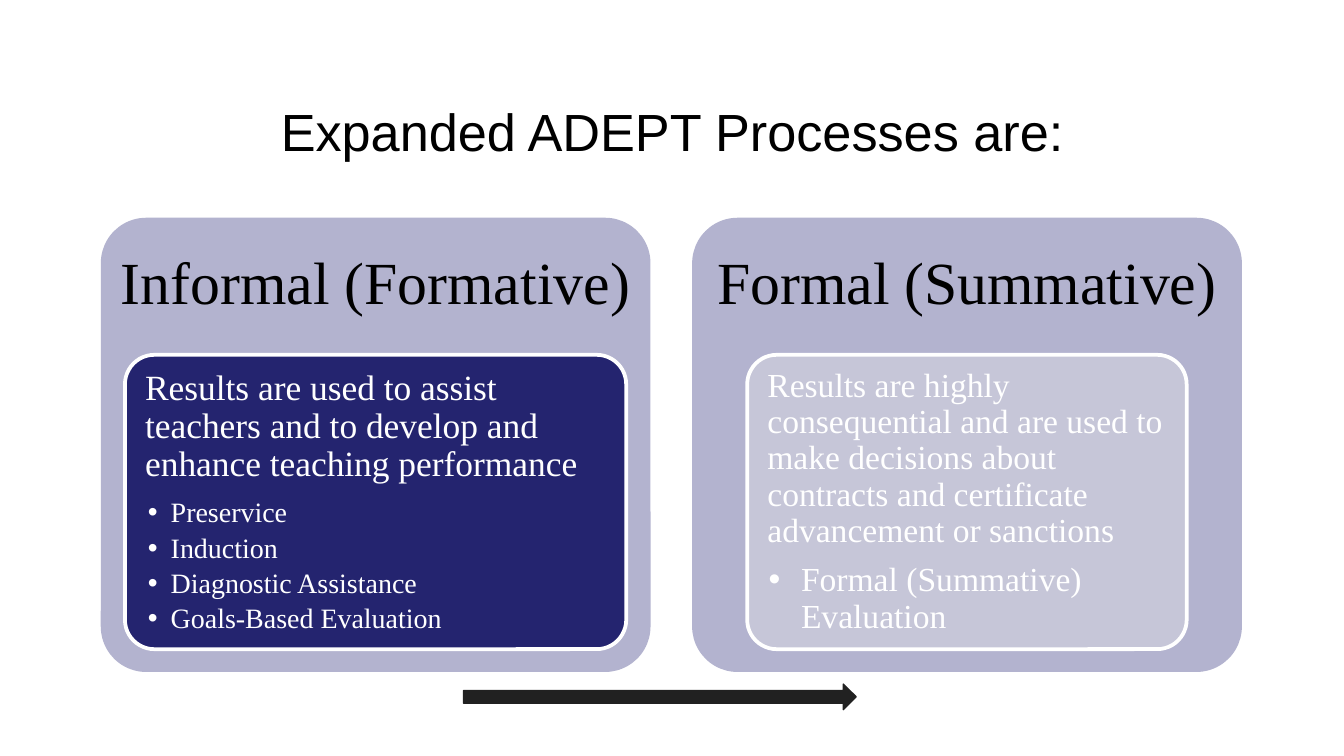
"""Build the slide that compares informal and formal ADEPT processes."""
from lxml.etree import SubElement
from pptx import Presentation
from pptx.dml.color import RGBColor
from pptx.enum.shapes import MSO_SHAPE
from pptx.enum.text import MSO_ANCHOR, PP_ALIGN
from pptx.oxml.ns import qn
from pptx.util import Inches, Pt

COLORS = {"black": "000000", "white": "FFFFFF", "panel": "B3B3CF",
          "navy": "24246F", "pale": "C6C6D8", "arrow": "212121"}
SLIDE_WIDTH = 10
SLIDE_HEIGHT = SLIDE_WIDTH * 9 / 16
LEFT, TOP, PITCH = 0.75, 1.62, 4.4
PANEL_WIDTH, PANEL_HEIGHT, HEADING_HEIGHT = 4.09, 3.38, 1.01
CARD_TOP, CARD_HEIGHT = 2.64, 2.19
PAD_X, PAD_Y = 0.09, 0.06

PANELS = [
    {"heading": "Informal (Formative)", "fill": "navy", "width": 3.73,
     "summary": "Results are used to assist teachers and to develop and enhance teaching performance",
     "bullets": ["Preservice", "Induction", "Diagnostic Assistance", "Goals-Based Evaluation"],
     "sizes": (19, 15), "margin": 0.05, "indent": (0.19, -0.17), "gaps": (7.7, 2.7)},
    {"heading": "Formal (Summative)", "fill": "pale", "width": 3.27,
     "summary": "Results are highly consequential and are used to make decisions about "
                "contracts and certificate advancement or sanctions",
     "bullets": ["Formal (Summative) Evaluation"],
     "sizes": (18, 18), "margin": 0.04, "indent": (0.25, -0.24), "gaps": (7, 7)},
]

deck = Presentation()
deck.slide_width, deck.slide_height = Inches(SLIDE_WIDTH), Inches(SLIDE_HEIGHT)
page = deck.slides.add_slide(deck.slide_layouts[6])


def add_block(kind, area, fill, line=None, line_width=0, adjustments=(0.1,)):
    shape = page.shapes.add_shape(kind, *map(Inches, area))
    shape.shadow.inherit = False
    for index, value in enumerate(adjustments):
        shape.adjustments[index] = value
    shape.fill.solid()
    shape.fill.fore_color.rgb = RGBColor.from_string(COLORS[fill])
    if line:
        shape.line.color.rgb = RGBColor.from_string(COLORS[line])
        shape.line.width = Pt(line_width)
    else:
        shape.line.fill.background()


def add_text(area, margins, anchor, entries, font, color):
    box = page.shapes.add_textbox(*map(Inches, area))
    frame = box.text_frame
    settings = {"word_wrap": True, "vertical_anchor": anchor,
                "margin_left": Inches(margins[0]), "margin_right": Inches(margins[0]),
                "margin_top": Inches(margins[1]), "margin_bottom": Inches(margins[1])}
    for name, value in settings.items():
        setattr(frame, name, value)
    for index, (text, size, layout) in enumerate(entries):
        para = frame.add_paragraph() if index else frame.paragraphs[0]
        for name, value in layout.items():
            setattr(para, name, value)
        span = para.add_run()
        span.text = text
        for name, value in {"name": font, "size": Pt(size)}.items():
            setattr(span.font, name, value)
        span.font.color.rgb = RGBColor.from_string(COLORS[color])
    return frame


add_text((LEFT, 0.5, SLIDE_WIDTH - 2 * LEFT, 0.94), (0.1, 0.05), MSO_ANCHOR.MIDDLE,
         [("Expanded ADEPT Processes are:", 28, {"alignment": PP_ALIGN.CENTER})],
         "Arial", "black")

for column, panel in enumerate(PANELS):
    left = LEFT + column * PITCH
    add_block(MSO_SHAPE.ROUNDED_RECTANGLE, (left, TOP, PANEL_WIDTH, PANEL_HEIGHT), "panel")
    add_text((left, TOP, PANEL_WIDTH, HEADING_HEIGHT), (0.13, 0.13), MSO_ANCHOR.MIDDLE,
             [(panel["heading"], 32, {"alignment": PP_ALIGN.CENTER, "line_spacing": 0.9})],
             "Times New Roman", "black")

    width = panel["width"]
    card_left = left + (PANEL_WIDTH - width) / 2
    add_block(MSO_SHAPE.ROUNDED_RECTANGLE, (card_left, CARD_TOP, width, CARD_HEIGHT),
              panel["fill"], "white", 2)

    summary_size, bullet_size = panel["sizes"]
    first_gap, next_gap = panel["gaps"]
    entries = [(panel["summary"], summary_size, {"line_spacing": 0.9})]
    for row, bullet in enumerate(panel["bullets"]):
        gap = next_gap if row else first_gap
        entries.append((bullet, bullet_size,
                        {"level": 1, "line_spacing": 0.9, "space_before": Pt(gap)}))
    frame = add_text((card_left + PAD_X, CARD_TOP + PAD_Y, width - 2 * PAD_X,
                      CARD_HEIGHT - 2 * PAD_Y), (0.06, panel["margin"]),
                     MSO_ANCHOR.TOP, entries, "Times New Roman", "white")

    for para in frame.paragraphs[1:]:
        properties = para._p.get_or_add_pPr()
        for name, value in zip(("marL", "indent"), panel["indent"]):
            properties.set(name, str(Inches(value)))
        bullet_color = SubElement(properties, qn("a:buClr"))
        SubElement(bullet_color, qn("a:srgbClr"), val=COLORS["white"])
        SubElement(properties, qn("a:buFont"), typeface="Arial")
        SubElement(properties, qn("a:buChar"), char="•")

add_block(MSO_SHAPE.RIGHT_ARROW, (3.45, 5.09, 2.92, 0.19), "arrow", "arrow", 0.75, (0.5, 0.5))

deck.save("out.pptx")
